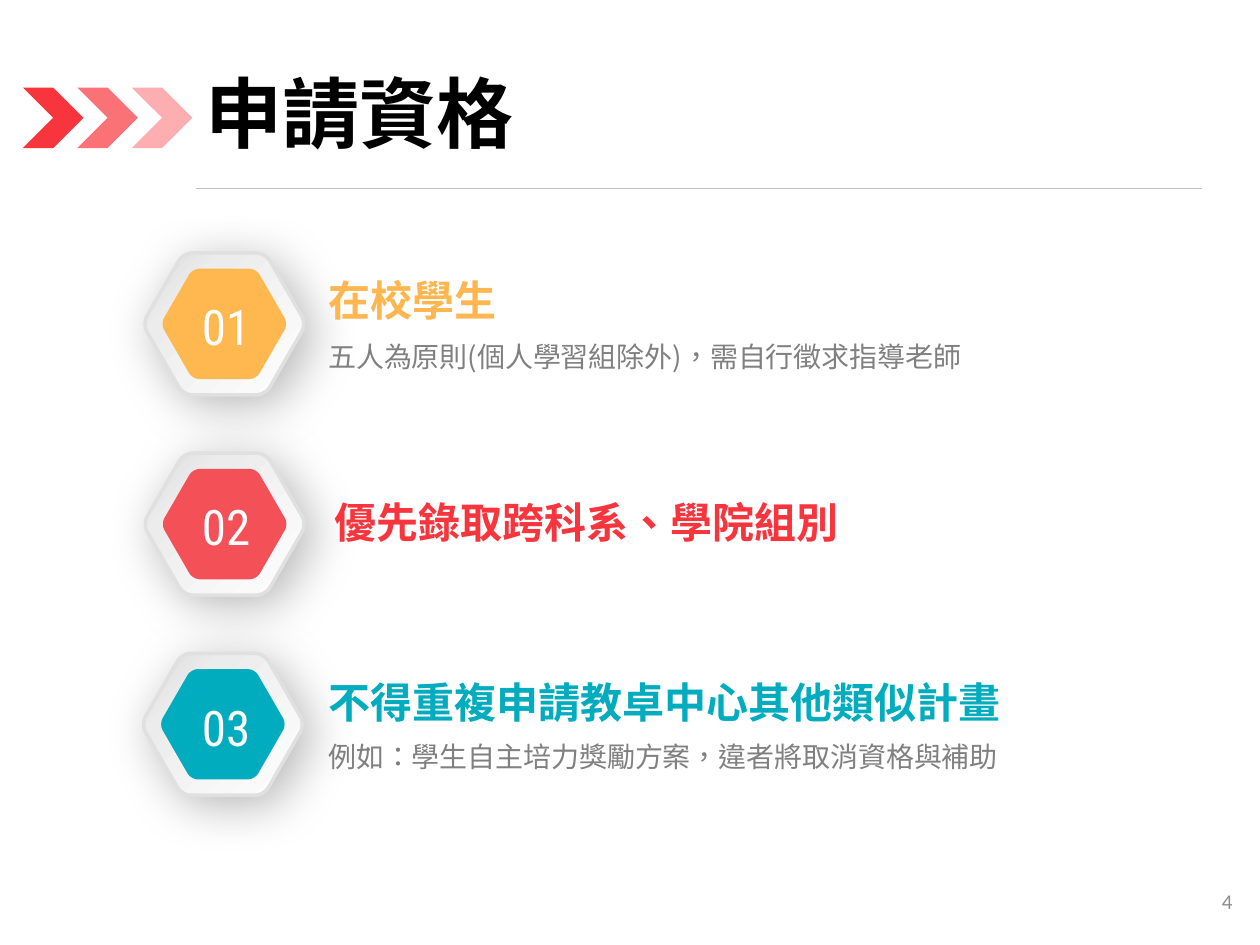
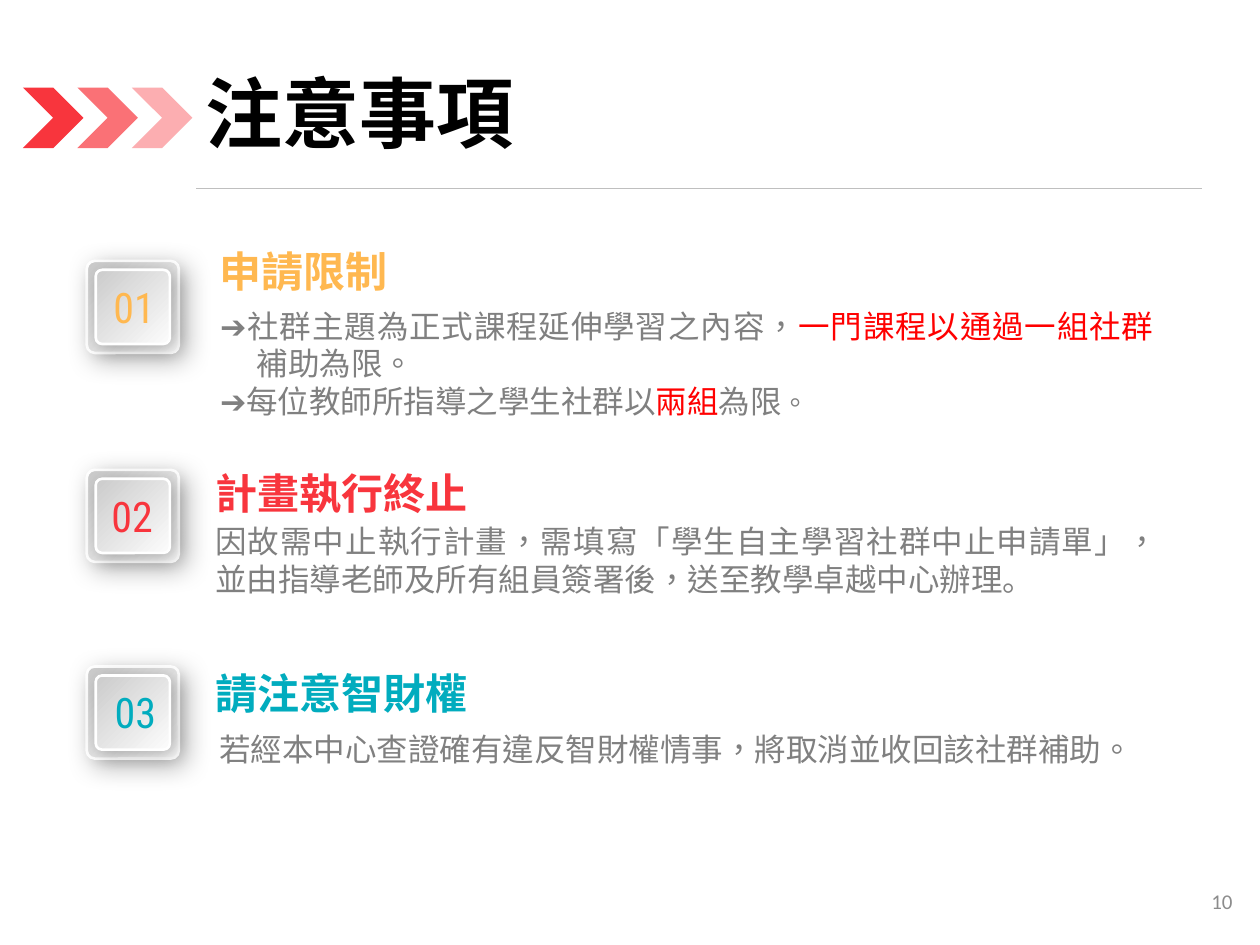
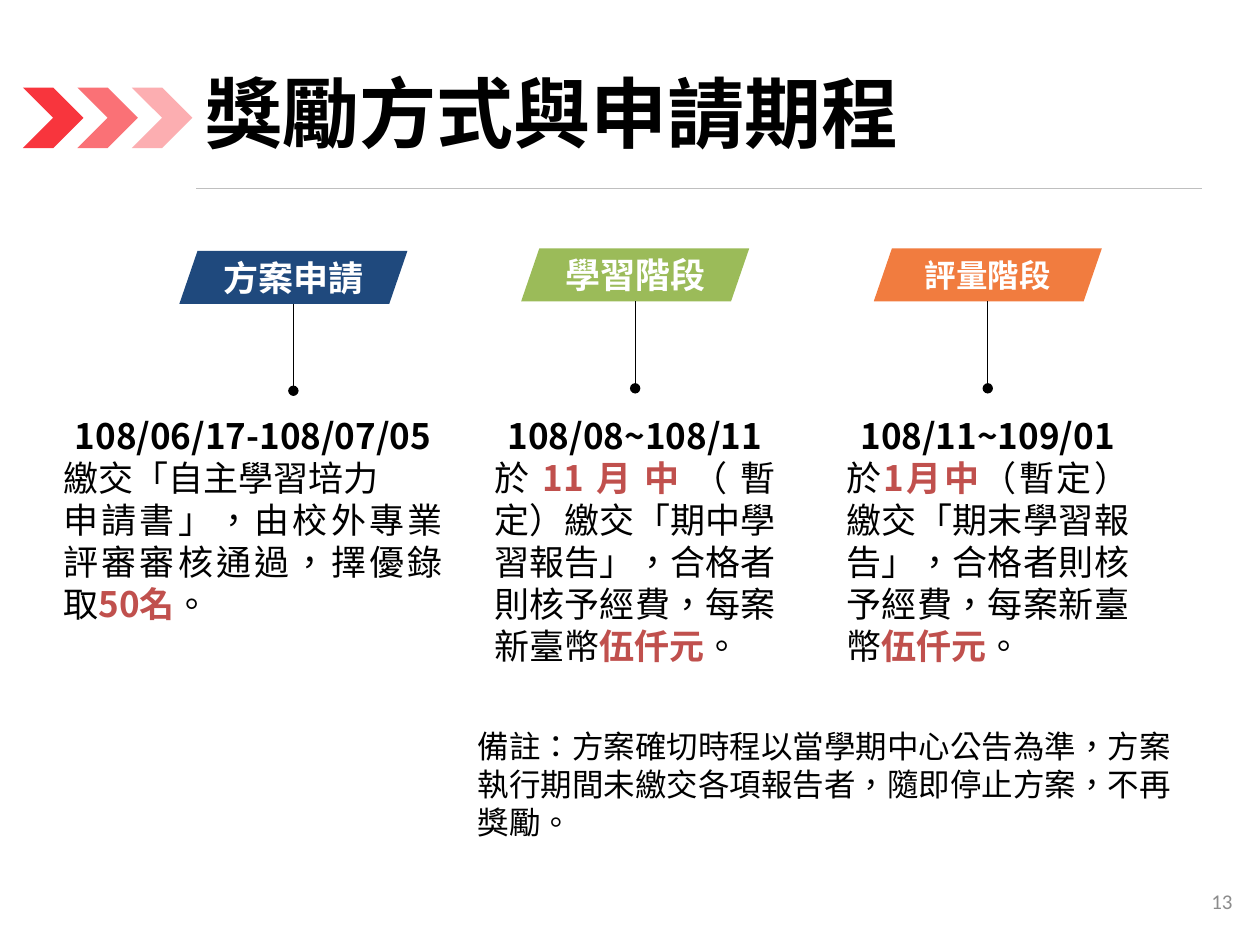
from math import cos, pi, sin

from lxml import etree
from pptx import Presentation
from pptx.dml.color import RGBColor
from pptx.enum.shapes import MSO_CONNECTOR, MSO_SHAPE
from pptx.enum.text import MSO_ANCHOR, MSO_AUTO_SIZE, PP_ALIGN
from pptx.oxml.ns import qn
from pptx.util import Pt

LEFT, CENTER, RIGHT, JUSTIFY = PP_ALIGN.LEFT, PP_ALIGN.CENTER, PP_ALIGN.RIGHT, PP_ALIGN.JUSTIFY
TOP, MIDDLE = MSO_ANCHOR.TOP, MSO_ANCHOR.MIDDLE
GROW, FIXED = MSO_AUTO_SIZE.SHAPE_TO_FIT_TEXT, MSO_AUTO_SIZE.NONE
CHEVRON, ROUNDED, BANNER = MSO_SHAPE.CHEVRON, MSO_SHAPE.ROUNDED_RECTANGLE, MSO_SHAPE.PARALLELOGRAM
STRAIGHT = MSO_CONNECTOR.STRAIGHT

CJK, NUMERAL, LATIN = "Noto Sans CJK SC", "Roboto Condensed", "Calibri"
RED, AMBER, TEAL = "F8353D", "FFB850", "01ACBE"
BLACK, WHITE, GRAY = "000000", "FFFFFF", "808080"
ALERT, BRICK = "FF0000", "C0504D"


def rgb(code):
    return RGBColor.from_string(code)


def write(text, page=None, at=None, box=None, size=18, color=BLACK, bold=False, font=CJK,
          align=LEFT, anchor=TOP, fit=GROW, spacing=None, hanging=0):
    box = box or page.shapes.add_textbox(*map(Pt, at))
    frame = box.text_frame
    frame.word_wrap = True
    frame.auto_size = fit
    frame.vertical_anchor = anchor
    paragraphs = [(align, [(text, {})])] if isinstance(text, str) else text
    for index, (alignment, spans) in enumerate(paragraphs):
        para = frame.paragraphs[0] if index == 0 else frame.add_paragraph()
        para.alignment = alignment
        if spacing:
            para.line_spacing = spacing
        if hanging:
            properties = para._p.get_or_add_pPr()
            properties.set("marL", str(Pt(hanging)))
            properties.set("indent", str(-Pt(hanging)))
        for words, changes in spans:
            style = {"size": size, "color": color, "bold": bold, "lang": "zh-TW"} | changes
            span = para.add_run()
            span.text = words
            span.font.size = Pt(style["size"])
            span.font.bold = style["bold"]
            span.font.color.rgb = rgb(style["color"])
            span.font.name = font
            run_properties = span._r.get_or_add_rPr()
            run_properties.set("lang", style["lang"])
            etree.SubElement(run_properties, qn("a:ea")).set("typeface", font)


deck = Presentation()
deck.slide_width, deck.slide_height = Pt(720), Pt(540)
flat_shapes, raised_shapes, connectors = [], [], []

pages = []
for title, number in [("申請資格", "4"), ("注意事項", "10"), ("獎勵方式與申請期程", "13")]:
    page = deck.slides.add_slide(deck.slide_layouts[6])
    rule = page.shapes.add_connector(STRAIGHT, Pt(112.3), Pt(107.6), Pt(686.9), Pt(107.6))
    connectors.append((rule, "BFBFBF", 0.5))
    for step, opacity in enumerate([100, 70, 40]):
        chevron = page.shapes.add_shape(CHEVRON, Pt(13.1 + 31.1 * step), Pt(50), Pt(34.6), Pt(34.6))
        flat_shapes.append((chevron, RED, opacity))
    write(title, page, (110.2, 30.2, 576.7, 73.4), size=44, bold=True, anchor=MIDDLE,
          fit=FIXED, spacing=0.9)
    write(number, page, (549.4, 500.4, 162, 28.8), size=12, color="8C8C8C", font=LATIN,
          align=RIGHT, anchor=MIDDLE, fit=FIXED)
    pages.append(page)
eligibility, notices, schedule = pages

requirements = [
    ("在校學生", "FEB750", AMBER, 128.2, 180.7, 153.4,
     "五人為原則(個人學習組除外)，需自行徵求指導老師", 190.5),
    ("優先錄取跨科系、學院組別", RED, "F45058", 128.4, 184.3, 280.1, None, None),
    ("不得重複申請教卓中心其他類似計畫", TEAL, TEAL, 127.4, 180.7, 383,
     "例如：學生自主培力獎勵方案，違者將取消資格與補助", 418.8),
]
for index, (heading, color, badge_color, center_x, left, top, detail, detail_top) in enumerate(requirements):
    center_y = 185.1 + 114.4 * index
    for radius in (46.8, 36.4):
        corners = [(center_x + radius * cos(side * pi / 3), center_y + radius * sin(side * pi / 3))
                   for side in range(6)]
        outline = []
        for side, corner in enumerate(corners):
            before, after = corners[side - 1], corners[(side + 1) % 6]
            for neighbor, cut in [(before, 0.1), (before, 0.05), (after, 0.05), (after, 0.1)]:
                outline.append([Pt(c + cut * (n - c)) for c, n in zip(corner, neighbor)])
        builder = eligibility.shapes.build_freeform(*outline[0])
        builder.add_line_segments(outline[1:], close=True)
        hexagon = builder.convert_to_shape()
        segments = list(hexagon._element.iter(qn("a:lnTo")))
        for first in range(0, 24, 4):
            curve = etree.Element(qn("a:cubicBezTo"))
            segments[first].addprevious(curve)
            for segment in segments[first:first + 3]:
                curve.append(segment[0])
                segment.getparent().remove(segment)
        if radius > 40:
            raised_shapes.append((hexagon, [(0, "D9D9D9"), (27, "ECECEC"), (100, "FFFFFF")],
                                  "E0E0E0", 2, 28, 28, 7))
        else:
            flat_shapes.append((hexagon, badge_color, 100))
    write(f"0{index + 1}", eligibility, (105.1, center_y - 19.1, 48.2, 41), size=28,
          color=WHITE, font=NUMERAL, align=CENTER)
    write(heading, eligibility, (left, top, 430, 36), size=24, color=color, bold=True)
    if detail:
        write(detail, eligibility, (180.5, detail_top, 438, 26.6), size=16, color=GRAY, align=JUSTIFY)

limits = [
    (JUSTIFY, [("➔社群主題為正式課程延伸學習之內容，", {}),
               ("一門課程以通過一組社群", {"color": ALERT}), ("補助為限。", {})]),
    (JUSTIFY, [("➔每位教師所指導之學生社群以", {}), ("兩組", {"color": ALERT}),
               ("為限", {}), ("。", {"size": 16})]),
]
termination = [
    (JUSTIFY, [("因故需中止執行計畫，需填寫「學生自主學習社群中止申請單」，並由指導老師及所有組員簽署後，送至教學卓越中心辦理", {}),
               ("。", {"lang": "zh-CN"})]),
]
rules = [
    ("申請限制", AMBER, 149.1, 51.1, (111.6, 136.8, 123.8, 36),
     limits, (118.7, 171.6, 547.7, 72.7), 20.9),
    ("計畫執行終止", RED, 268.5, 49.9, (112.3, 263.5, 165.6, 36),
     termination, (115.9, 294.9, 553.5, 51), 0),
    ("請注意智財權", TEAL, 380.9, 51.8, (110.9, 378, 168.5, 36),
     "若經本中心查證確有違反智財權情事，將取消並收回該社群補助。", (118.3, 413.7, 568.8, 28.8), 0),
]
for index, (heading, color, top, number_left, heading_at, detail, detail_at, hanging) in enumerate(rules):
    for inset, blur, distance in [(0, 15, 5), (5.1, 11, 3)]:
        side = Pt(52.6 - 2 * inset)
        tile = notices.shapes.add_shape(ROUNDED, Pt(49.6 + inset), Pt(top + inset), side, side)
        tile.adjustments[0] = 0.087
        raised_shapes.append((tile, [(1, "CCCCCC"), (100, "FCFCFC")], WHITE, 1.5, 30, blur, distance))
    write(f"0{index + 1}", notices, (number_left, top + 8, 51.1, 36), size=24, color=color,
          font=NUMERAL, align=CENTER)
    write(heading, notices, heading_at, size=24, color=color, bold=True, align=CENTER)
    write(detail, notices, detail_at, color=GRAY, align=JUSTIFY, hanging=hanging)

strong = {"color": BRICK, "bold": True}
application = [
    (LEFT, [("繳交「自主學習培力", {})]),
    (JUSTIFY, [("申請書」，由校外專業評審審核通過，擇優錄取", {}), ("50名", strong), ("。", {})]),
]
midterm, final = [
    [(JUSTIFY, [("於", {}), (month, strong),
                (f"（暫定）繳交「{report}學習報告」，合格者則核予經費，每案新臺幣", {}),
                ("伍仟元", strong), ("。", {})])]
    for month, report in [("11月中", "期中"), ("1月中", "期末")]
]
stages = [
    ("方案申請", 20, "1F497D", 102.5, 143.4, "108/06/17-108/07/05", application, (29.1, 232.6, 231.1, 128.2)),
    ("學習階段", 20, "9BBB59", 297.8, 142, "108/08~108/11", midterm, (275.4, 232.6, 175, 152.6)),
    ("評量階段", 18, "F17C3F", 499.3, 142, "108/11~109/01", final, (476.6, 232.6, 175.7, 152.6)),
]
for name, size, color, left, top, dates, body, body_at in stages:
    banner = schedule.shapes.add_shape(BANNER, Pt(left), Pt(top), Pt(130.3), Pt(30.2))
    banner.adjustments[0] = 0.343
    flat_shapes.append((banner, color, 100))
    write(name, box=banner, size=size, color=WHITE, bold=True, align=CENTER, anchor=MIDDLE, fit=FIXED)
    middle, bottom = Pt(left + 65.15), top + 30.2
    stem = schedule.shapes.add_connector(STRAIGHT, middle, Pt(bottom), middle, Pt(bottom + 49.7))
    connectors.append((stem, BLACK, 0.75))
    etree.SubElement(stem.line._get_or_add_ln(), qn("a:tailEnd")).set("type", "oval")
    write([(CENTER, [(dates, {"bold": True})])] + body, schedule, body_at, size=20, anchor=MIDDLE)
write("備註：方案確切時程以當學期中心公告為準，方案執行期間未繳交各項報告者，隨即停止方案，不再獎勵。",
      schedule, (265.9, 412, 414.7, 72.7))

for shape, color, opacity in flat_shapes:
    shape.shadow.inherit = False
    shape.line.fill.background()
    shape.fill.solid()
    shape.fill.fore_color.rgb = rgb(color)
    if opacity < 100:
        fill_color = shape._element.spPr.find(qn("a:solidFill"))[0]
        etree.SubElement(fill_color, qn("a:alpha")).set("val", str(opacity * 1000))

for shape, stops, line_color, line_width, opacity, blur, distance in raised_shapes:
    shape.shadow.inherit = False
    shape.line.color.rgb = rgb(line_color)
    shape.line.width = Pt(line_width)
    shape.fill.gradient()
    shape.fill.gradient_angle = 315
    stop_list = shape._element.spPr.find(qn("a:gradFill")).find(qn("a:gsLst"))
    for stop in list(stop_list):
        stop_list.remove(stop)
    for position, color in stops:
        stop = etree.SubElement(stop_list, qn("a:gs"), pos=str(position * 1000))
        etree.SubElement(stop, qn("a:srgbClr"), val=color)
    effects = shape._element.spPr.find(qn("a:effectLst"))
    shadow = etree.SubElement(effects, qn("a:outerShdw"), blurRad=str(Pt(blur)), dist=str(Pt(distance)),
                              dir="2700000", algn="ctr", rotWithShape="0")
    shadow_color = etree.SubElement(shadow, qn("a:srgbClr"), val=BLACK)
    etree.SubElement(shadow_color, qn("a:alpha"), val=str(opacity * 1000))

for connector, color, width in connectors:
    connector.line.color.rgb = rgb(color)
    connector.line.width = Pt(width)
    etree.SubElement(connector._element.spPr, qn("a:effectLst"))

deck.save("out.pptx")
